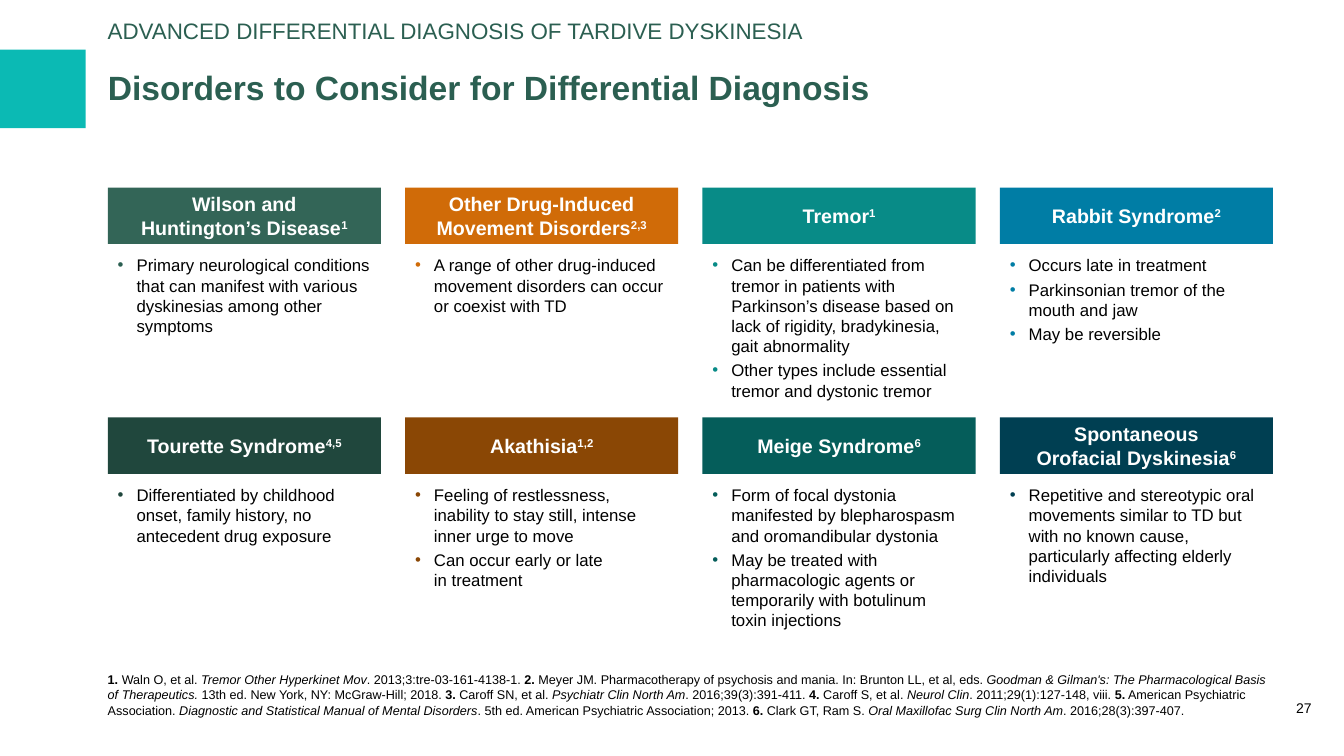
from pptx import Presentation
from pptx.dml.color import RGBColor
from pptx.enum.shapes import MSO_SHAPE
from pptx.enum.text import MSO_ANCHOR, PP_ALIGN
from pptx.oxml.ns import qn
from pptx.util import Pt
from lxml.etree import SubElement

COLORS = {
    "accent": "0BBAB4", "heading": "2B5F51", "black": "000000", "white": "FFFFFF",
    "wilson": "2B5F51", "drug": "D06B08", "tremor": "088B87", "rabbit": "007DA5",
    "tourette": "20473D", "akathisia": "8A4705", "meige": "055D5A", "orofacial": "003F52",
}
SECTION = "ADVANCED DIFFERENTIAL DIAGNOSIS OF TARDIVE DYSKINESIA"
TITLE = "Disorders to Consider for Differential Diagnosis"
PAGE_NUMBER = "27"
DISORDERS = [
    ("wilson", "Wilson and\nHuntington’s Disease", "1", [
        "Primary neurological conditions that can manifest with various dyskinesias among other symptoms"]),
    ("drug", "Other Drug-Induced Movement Disorders", "2,3", [
        "A range of other drug-induced movement disorders can occur\nor coexist with TD"]),
    ("tremor", "Tremor", "1", [
        "Can be differentiated from tremor in patients with Parkinson’s disease based on "
        "lack of rigidity, bradykinesia, gait abnormality",
        "Other types include essential tremor and dystonic tremor"]),
    ("rabbit", "Rabbit Syndrome", "2", [
        "Occurs late in treatment",
        "Parkinsonian tremor of the\nmouth and jaw",
        "May be reversible"]),
    ("tourette", "Tourette Syndrome", "4,5", [
        "Differentiated by childhood onset, family history, no antecedent drug exposure"]),
    ("akathisia", "Akathisia", "1,2", [
        "Feeling of restlessness, inability to stay still, intense inner urge to move",
        "Can occur early or late\nin treatment"]),
    ("meige", "Meige Syndrome", "6", [
        "Form of focal dystonia manifested by blepharospasm and oromandibular dystonia",
        "May be treated with pharmacologic agents or temporarily with botulinum toxin injections"]),
    ("orofacial", "Spontaneous\nOrofacial Dyskinesia", "6", [
        "Repetitive and stereotypic oral movements similar to TD but with no known cause, "
        "particularly affecting elderly individuals"]),
]
REFERENCES = [
    ("1.", " Waln O, et al. ", "Tremor Other Hyperkinet Mov", ". 2013;3:tre-03-161-4138-1. "),
    ("2.", " Meyer JM. Pharmacotherapy of psychosis and mania. In: Brunton LL, et al, eds. ",
     "Goodman & Gilman's: The Pharmacological Basis of Therapeutics.",
     " 13th ed. New York, NY: McGraw-Hill; 2018. "),
    ("3.", " Caroff SN, et al. ", "Psychiatr Clin North Am", ". 2016;39(3):391-411. "),
    ("4.", " Caroff S, et al. ", "Neurol Clin", ". 2011;29(1):127-148, viii. "),
    ("5.", " American Psychiatric Association. ",
     "Diagnostic and Statistical Manual of Mental Disorders",
     ". 5th ed. American Psychiatric Association; 2013. "),
    ("6.", " Clark GT, Ram S. ", "Oral Maxillofac Surg Clin North Am", ". 2016;28(3):397-407."),
]

LEFT, COLUMN_WIDTH, COLUMN_PITCH, COLUMNS = 77, 195.1, 212.4, 4
TOP, HEADER_HEIGHT, ROW_PITCH = 134, 40.3, 164.2
BODY_OFFSET, BODY_HEIGHT, BULLET_INDENT = 41, 116, 13.5


def color(name):
    return RGBColor.from_string(COLORS[name])


def style(run, size, color_name="black", bold=False, italic=False):
    run.font.name = "Arial"
    run.font.size = Pt(size)
    run.font.bold = bold
    run.font.italic = italic
    run.font.color.rgb = color(color_name)


def add_box(slide, box, fill):
    shape = slide.shapes.add_shape(MSO_SHAPE.RECTANGLE, *map(Pt, box))
    shape.shadow.inherit = False
    shape.fill.solid()
    shape.fill.fore_color.rgb = color(fill)
    shape.line.fill.background()
    return shape


def add_text_frame(slide, box, anchor, margins=(0, 0, 0, 0)):
    text_frame = slide.shapes.add_textbox(*map(Pt, box)).text_frame
    text_frame.word_wrap = True
    text_frame.vertical_anchor = anchor
    (text_frame.margin_left, text_frame.margin_top,
     text_frame.margin_right, text_frame.margin_bottom) = map(Pt, margins)
    return text_frame


def add_line(slide, text, box, anchor, size, color_name, bold=False, align=PP_ALIGN.LEFT):
    paragraph = add_text_frame(slide, box, anchor).paragraphs[0]
    paragraph.text = text
    paragraph.alignment = align
    paragraph.line_spacing = 0.95
    style(paragraph.runs[0], size, color_name, bold)


def add_header(slide, box, name, title, citation):
    shape = add_box(slide, box, name)
    if name == "wilson":
        fill_color = shape.fill._xPr.find(".//" + qn("a:srgbClr"))
        SubElement(fill_color, qn("a:alpha"), val="96000")
    shape.text_frame.word_wrap = True
    shape.text_frame.vertical_anchor = MSO_ANCHOR.MIDDLE
    paragraph = shape.text_frame.paragraphs[0]
    paragraph.text = title
    paragraph.alignment = PP_ALIGN.CENTER
    superscript = paragraph.add_run()
    superscript.text = citation
    for run in paragraph.runs:
        style(run, 14, "white", bold=True)
    superscript.font._element.set("baseline", "30000")


def add_bullets(slide, box, name, items):
    text_frame = add_text_frame(slide, box, MSO_ANCHOR.TOP, (7.2, 7.2, 7.2, 3.6))
    for index, item in enumerate(items):
        paragraph = text_frame.add_paragraph() if index else text_frame.paragraphs[0]
        properties = paragraph._p.get_or_add_pPr()
        properties.set("marL", str(Pt(BULLET_INDENT)))
        properties.set("indent", str(-Pt(BULLET_INDENT)))
        bullet_color = SubElement(properties, qn("a:buClr"))
        SubElement(bullet_color, qn("a:srgbClr"), val=COLORS[name])
        SubElement(properties, qn("a:buFont"), typeface="Arial")
        SubElement(properties, qn("a:buChar"), char="•")
        paragraph.text = item
        paragraph.space_after = Pt(3)
        for run in paragraph.runs:
            style(run, 12)


def add_references(slide):
    text_frame = add_text_frame(slide, (LEFT, 472.3, 832.3, 40.3), MSO_ANCHOR.BOTTOM)
    paragraph = text_frame.paragraphs[0]
    for reference in REFERENCES:
        for position, text in enumerate(reference):
            run = paragraph.add_run()
            run.text = text
            style(run, 9, bold=position == 0, italic=position == 2)


def main():
    presentation = Presentation()
    presentation.slide_width, presentation.slide_height = Pt(960), Pt(540)
    slide = presentation.slides.add_slide(presentation.slide_layouts[6])

    add_box(slide, (0, 35.5, 61.2, 56), "accent")
    add_line(slide, TITLE, (LEFT, 28, 710, 71.3), MSO_ANCHOR.MIDDLE, 24, "heading", bold=True)
    add_line(slide, SECTION, (LEFT, 13, 738.7, 20), MSO_ANCHOR.MIDDLE, 16, "heading")
    add_line(slide, PAGE_NUMBER, (919.5, 481, 23.8, 31), MSO_ANCHOR.BOTTOM, 10, "black",
             align=PP_ALIGN.CENTER)

    for index, (name, title, citation, items) in enumerate(DISORDERS):
        row, column = divmod(index, COLUMNS)
        left, top = LEFT + column * COLUMN_PITCH, TOP + row * ROW_PITCH
        add_bullets(slide, (left, top + BODY_OFFSET, COLUMN_WIDTH, BODY_HEIGHT), name, items)
        add_header(slide, (left, top, COLUMN_WIDTH, HEADER_HEIGHT), name, title, citation)

    add_references(slide)
    presentation.save("out.pptx")


if __name__ == "__main__":
    main()
